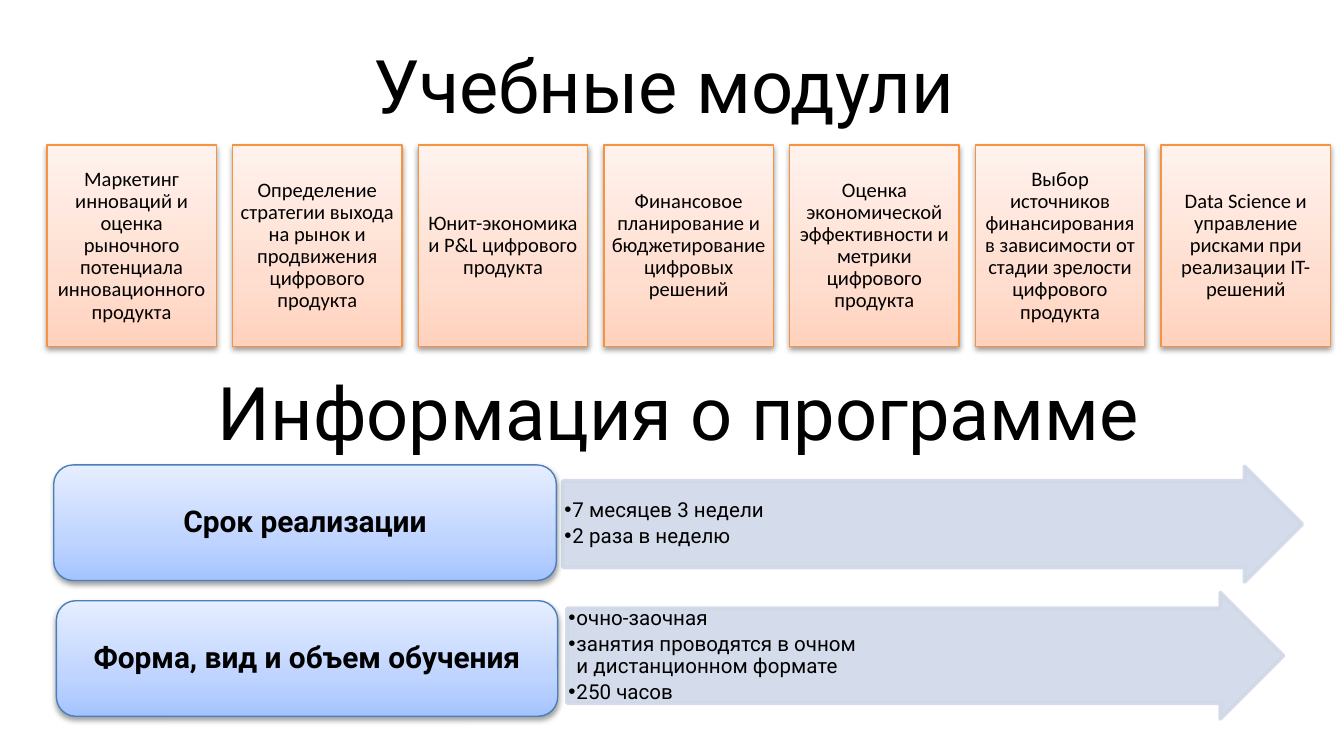
from dataclasses import dataclass

from lxml import etree
from pptx import Presentation
from pptx.dml.color import RGBColor
from pptx.enum.shapes import MSO_SHAPE
from pptx.enum.text import MSO_ANCHOR, MSO_AUTO_SIZE, PP_ALIGN
from pptx.oxml.ns import qn
from pptx.util import Inches, Pt

RECT = MSO_SHAPE.RECTANGLE
ROUND_RECT = MSO_SHAPE.ROUNDED_RECTANGLE
ARROW = MSO_SHAPE.RIGHT_ARROW
MIDDLE = MSO_ANCHOR.MIDDLE
CENTER, LEFT = PP_ALIGN.CENTER, PP_ALIGN.LEFT


@dataclass(frozen=True)
class Theme:
    text: str = "000000"
    module_line: str = "F69240"
    module_fill: tuple = ((0, "FFD2BD"), (35, "FFDED0"), (100, "FFF2ED"))
    label_line: str = "4B7EBC"
    label_fill: tuple = ((0, "A4C4FF"), (35, "BFD4FF"), (100, "E6EEFF"))
    arrow: str = "D0D8E8"
    heading_font: str = "Roboto"
    module_font: str = "Calibri"
    bullet_font: str = "Arial"
    heading_size: float = 39.6
    label_size: int = 16
    body_size: int = 11


THEME = Theme()

MODULES = [
    "Маркетинг инноваций и оценка рыночного потенциала инновационного продукта",
    "Определение стратегии выхода на рынок и продвижения цифрового продукта",
    "Юнит-экономика и P&L цифрового продукта",
    "Финансовое планирование и бюджетирование цифровых решений",
    "Оценка экономической эффективности и метрики цифрового продукта",
    "Выбор источников финансирования в зависимости от стадии зрелости цифрового продукта",
    "Data Science и управление рисками при реализации IT-решений",
]
MODULE_LEFT, MODULE_LAST_LEFT = 0.35, 8.64

# Label, label box, arrow box, bullets (each a list of lines)
PROGRAM = [
    ("Срок реализации", (0.4, 3.46, 3.74, 0.86), (4.19, 3.47, 5.5, 0.86),
     [["7 месяцев 3 недели"], ["2 раза в неделю"]]),
    ("Форма, вид и объем обучения", (0.42, 4.47, 3.73, 0.86), (4.22, 4.41, 5.33, 0.94),
     [["очно-заочная"],
      ["занятия проводятся в очном ", "и дистанционном формате"],
      ["250 часов"]]),
]


def place(sp, box):
    sp.left, sp.top, sp.width, sp.height = map(Inches, box)


def set_frame(tf, insets):
    """Wrap and centre vertically; insets are left/right and top/bottom."""
    tf.word_wrap = True
    tf.auto_size = MSO_AUTO_SIZE.NONE
    tf.vertical_anchor = MIDDLE
    tf.margin_left = tf.margin_right = Inches(insets[0])
    tf.margin_top = tf.margin_bottom = Inches(insets[1])


def write(p, lines, font, size, bold=False, align=CENTER, spacing=0.9):
    p.alignment = align
    p.line_spacing = spacing
    for i, line in enumerate(lines):
        if i:
            p.add_line_break()
        r = p.add_run()
        r.text = line
        r.font.name = font
        r.font.size = Pt(size)
        r.font.bold = bold
        r.font.color.rgb = RGBColor.from_string(THEME.text)


def add_bullet(p):
    pPr = p._p.get_or_add_pPr()
    pPr.set("marL", str(Inches(0.06)))
    pPr.set("indent", str(Inches(-0.06)))
    etree.SubElement(pPr, qn("a:buFont"), typeface=THEME.bullet_font)
    etree.SubElement(pPr, qn("a:buChar"), char="•")


def add_color(parent, color, alpha=None):
    clr = etree.SubElement(parent, qn("a:srgbClr"), val=color)
    if alpha is not None:
        etree.SubElement(clr, qn("a:alpha"), val=str(alpha * 1000))


def add_heading(sp, text, box, spacing):
    place(sp, box)
    set_frame(sp.text_frame, (0.1, 0.05))
    write(sp.text_frame.paragraphs[0], [text], THEME.heading_font,
          THEME.heading_size, spacing=spacing)


def add_card(slide, shape, box, stops, line, insets):
    """Add a box with an upward gradient and a soft shadow below it."""
    sp = slide.shapes.add_shape(shape, *map(Inches, box))
    sp.fill.gradient()
    sp.fill.gradient_angle = 90
    spPr = sp._element.spPr
    gs_list = spPr.find(".//" + qn("a:gsLst"))
    for stop in list(gs_list):
        gs_list.remove(stop)
    for pos, color in stops:
        add_color(etree.SubElement(gs_list, qn("a:gs"), pos=str(pos * 1000)), color)
    sp.line.color.rgb = RGBColor.from_string(line)
    sp.line.width = Pt(0.75)
    sp.shadow.inherit = False
    shadow = etree.SubElement(
        spPr.find(qn("a:effectLst")), qn("a:outerShdw"), blurRad=str(Pt(3.1)),
        dist=str(Pt(1.6)), dir="5400000", rotWithShape="0")
    add_color(shadow, "000000", 38)
    set_frame(sp.text_frame, insets)
    return sp


def add_module(slide, text, left):
    sp = add_card(slide, RECT, (left, 1.08, 1.26, 1.5), THEME.module_fill,
                  THEME.module_line, (0.05, 0.05))
    write(sp.text_frame.paragraphs[0], [text], THEME.module_font, THEME.body_size)


def add_label(slide, text, box):
    sp = add_card(slide, ROUND_RECT, box, THEME.label_fill, THEME.label_line, (0.07, 0.03))
    write(sp.text_frame.paragraphs[0], [text], THEME.heading_font,
          THEME.label_size, bold=True)


def add_arrow(slide, bullets, box):
    sp = slide.shapes.add_shape(ARROW, *map(Inches, box))
    sp.adjustments[0], sp.adjustments[1] = 0.75, 0.5
    color = RGBColor.from_string(THEME.arrow)
    sp.fill.solid()
    sp.fill.fore_color.rgb = color
    sp.line.color.rgb = color
    sp.line.width = Pt(2)
    sp.shadow.inherit = False
    for clr in sp._element.spPr.iter(qn("a:srgbClr")):
        etree.SubElement(clr, qn("a:alpha"), val="90000")
    tf = sp.text_frame
    set_frame(tf, (0.01, 0.01))
    for i, lines in enumerate(bullets):
        p = tf.add_paragraph() if i else tf.paragraphs[0]
        p.level = 1
        add_bullet(p)
        write(p, lines, THEME.heading_font, THEME.body_size, align=LEFT)
        p.space_after = Pt(2)


def main():
    prs = Presentation()
    prs.slide_width = Inches(10)
    prs.slide_height = prs.slide_width * 9 // 16
    slide = prs.slides.add_slide(prs.slide_layouts[5])

    add_heading(slide.shapes.title, "Учебные модули", (0.44, 0.36, 9, 0.65), 0.8)
    step = (MODULE_LAST_LEFT - MODULE_LEFT) / (len(MODULES) - 1)
    for i, text in enumerate(MODULES):
        add_module(slide, text, MODULE_LEFT + i * step)

    box = (0.55, 2.73, 9, 0.74)
    add_heading(slide.shapes.add_textbox(*map(Inches, box)),
                "Информация о программе", box, 0.9)
    for label, label_box, arrow_box, bullets in PROGRAM:
        add_arrow(slide, bullets, arrow_box)
        add_label(slide, label, label_box)

    prs.save("out.pptx")


if __name__ == "__main__":
    main()
